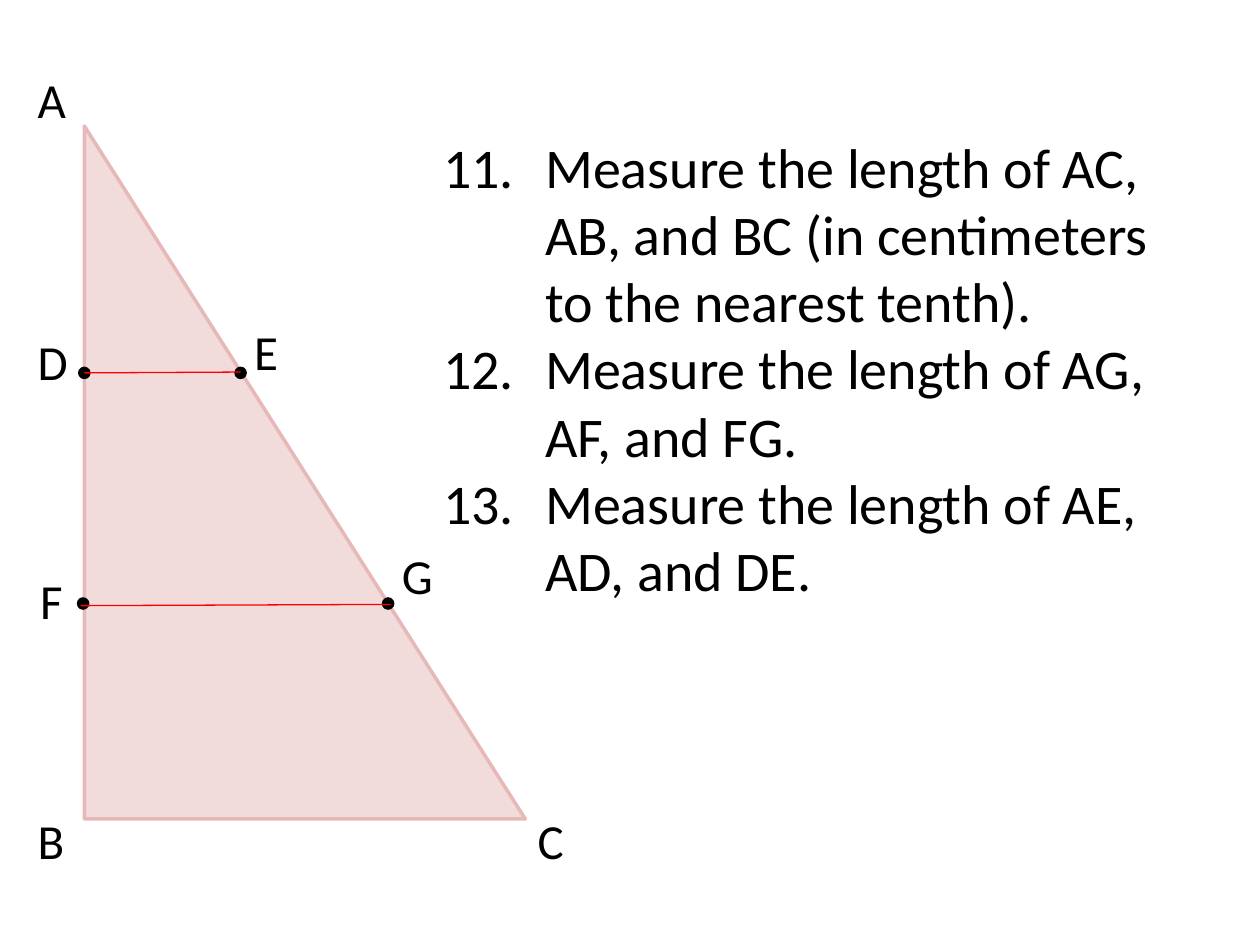
"""Build a geometry slide: a right triangle with parallel segments and measuring tasks."""
from lxml import etree
from pptx import Presentation
from pptx.dml.color import RGBColor
from pptx.enum.shapes import MSO_CONNECTOR, MSO_SHAPE
from pptx.enum.text import MSO_AUTO_SIZE
from pptx.oxml.ns import qn
from pptx.util import Pt

LINE = MSO_CONNECTOR.STRAIGHT
TRIANGLE, OVAL = MSO_SHAPE.RIGHT_TRIANGLE, MSO_SHAPE.OVAL
FIT = MSO_AUTO_SIZE.SHAPE_TO_FIT_TEXT

TASKS = [
    "Measure the length of AC, AB, and BC (in centimeters to the nearest tenth).",
    "Measure the length of AG, AF, and FG.",
    "Measure the length of AE, AD, and DE.",
]
FIRST_NUMBER = 11
LABELS = {
    "A": (14.4, 36), "B": (14.4, 459.4), "C": (300.2, 459.4),
    "D": (14.4, 185.8), "E": (138.2, 180), "F": (15.8, 322.6), "G": (222.5, 308.2),
}
TRIANGLE_BOX = (48.2, 72, 252, 396)
TASK_BOX = (246.2, 72, 450, 278.6)
LABEL_SIZE = (41.8, 41)
POINTS = [(48.2, 213.1), (137.5, 213.1), (47.5, 344.9), (221.8, 344.9)]
SEGMENTS = [((48.2, 213.1), (137.5, 212.6)), ((46.1, 346.1), (223.2, 345.4))]
DOT = 7.2
INDENT = 58.3

THEME = {
    "font": "Calibri", "label": 28, "task": 32, "edge": 2, "segment": 0.75,
    "ink": RGBColor(0, 0, 0), "fill": RGBColor(0xF2, 0xDC, 0xDB),
    "outline": RGBColor(0xE6, 0xB9, 0xB8), "red": RGBColor(0xFF, 0, 0),
}


def pts(values):
    return [Pt(v) for v in values]


def add_text(s, box, lines, size):
    tf = s.shapes.add_textbox(*pts(box)).text_frame
    for name, value in {"word_wrap": True, "auto_size": FIT}.items():
        setattr(tf, name, value)
    for i, line in enumerate(lines):
        p = tf.add_paragraph() if i else tf.paragraphs[0]
        r = p.add_run()
        r.text = line
        for name, value in {"name": THEME["font"], "size": Pt(size)}.items():
            setattr(r.font, name, value)
        r.font.color.rgb = THEME["ink"]
    return tf


def number(tf, start):
    for p in tf.paragraphs:
        pPr = p._p.get_or_add_pPr()
        pPr.set("marL", str(Pt(INDENT)))
        pPr.set("indent", str(-Pt(INDENT)))
        etree.SubElement(pPr, qn("a:buFont"), typeface="+mj-lt")
        etree.SubElement(pPr, qn("a:buAutoNum"), type="arabicPeriod", startAt=str(start))


def add_filled(s, kind, box, fill, outline=None):
    sp = s.shapes.add_shape(kind, *pts(box))
    sp.shadow.inherit = False
    sp.fill.solid()
    sp.fill.fore_color.rgb = fill
    if outline is None:
        sp.line.fill.background()
    else:
        sp.line.color.rgb = outline
        sp.line.width = Pt(THEME["edge"])


def add_segment(s, start, end):
    sp = s.shapes.add_connector(LINE, *pts(start + end))
    sp.line.color.rgb = THEME["red"]
    sp.line.width = Pt(THEME["segment"])
    etree.SubElement(sp._element.spPr, qn("a:effectLst"))


def main():
    prs = Presentation()
    prs.slide_width, prs.slide_height = Pt(720), Pt(540)
    s = prs.slides.add_slide(prs.slide_layouts[6])
    number(add_text(s, TASK_BOX, TASKS, THEME["task"]), FIRST_NUMBER)
    add_filled(s, TRIANGLE, TRIANGLE_BOX, THEME["fill"], THEME["outline"])
    for letter, corner in LABELS.items():
        add_text(s, corner + LABEL_SIZE, [letter], THEME["label"])
    for x, y in POINTS:
        add_filled(s, OVAL, (x - DOT / 2, y - DOT / 2, DOT, DOT), THEME["ink"])
    for start, end in SEGMENTS:
        add_segment(s, start, end)
    prs.save("out.pptx")


if __name__ == "__main__":
    main()
